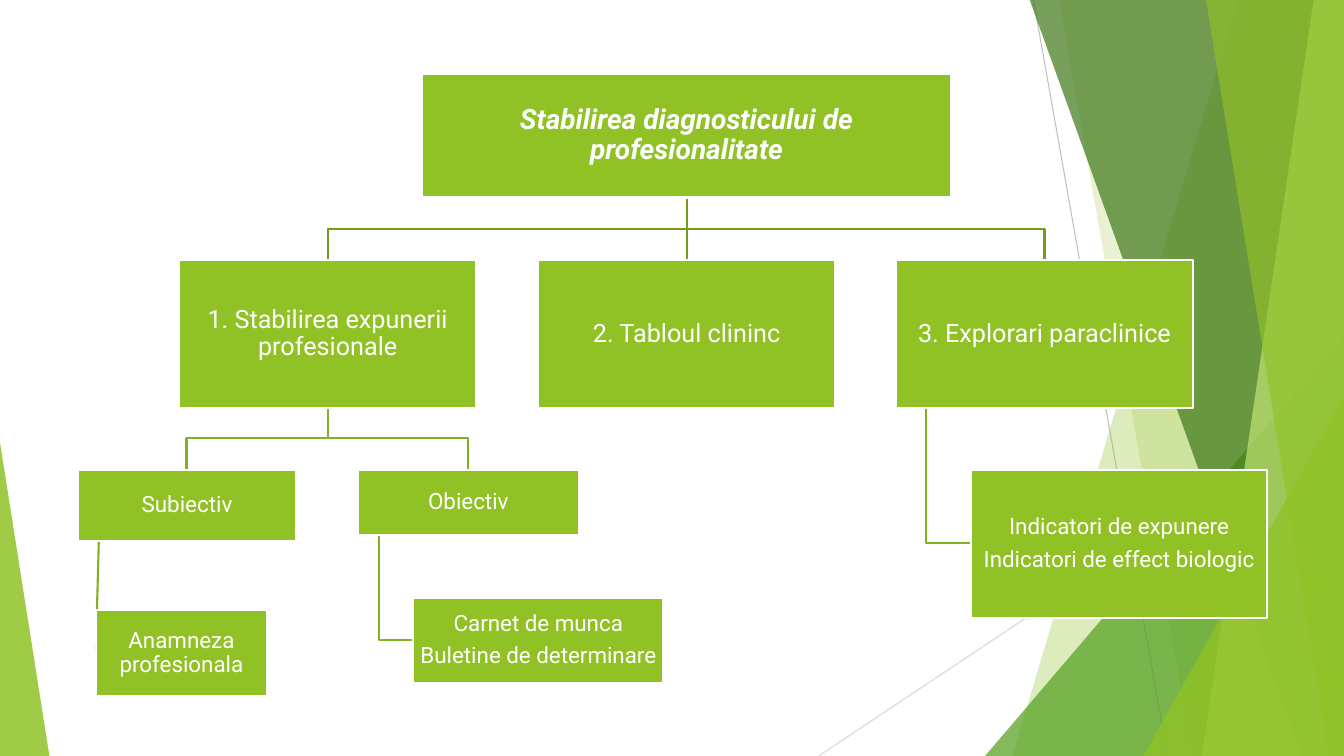
import pptx
import pptx.util
import pptx.dml.color
import pptx.enum.shapes
import pptx.enum.text
import pptx.oxml
import pptx.oxml.ns

RGB = pptx.dml.color.RGBColor
SHAPE = pptx.enum.shapes.MSO_SHAPE
WHITE = RGB(0xFF, 0xFF, 0xFF)
LIME = RGB(0x90, 0xC2, 0x26)
GREEN = RGB(0x54, 0xA0, 0x21)
FOREST = RGB(0x3F, 0x78, 0x19)
PALE_LIME = RGB(0xC0, 0xE4, 0x74)
ROOT_LINK = RGB(0x73, 0x9B, 0x1E)
BRANCH_LINK = RGB(0x83, 0xB0, 0x22)
GREY = RGB(0xBF, 0xBF, 0xBF)
LIGHT_GREY = RGB(0xD9, 0xD9, 0xD9)
PX = 9144
WIDTH, HEIGHT = 1333, 750


def write_text(frame, text, size, font="Roboto", color=WHITE, bold=False, italic=False):
    frame.word_wrap = True
    frame.vertical_anchor = pptx.enum.text.MSO_ANCHOR.MIDDLE
    frame.margin_left = frame.margin_right = PX
    frame.margin_top = frame.margin_bottom = PX
    for index, line in enumerate(text.split("\n")):
        paragraph = frame.add_paragraph() if index else frame.paragraphs[0]
        paragraph.alignment = pptx.enum.text.PP_ALIGN.CENTER
        paragraph.line_spacing = 0.9
        paragraph.space_after = pptx.util.Pt(size * 0.35)
        run = paragraph.add_run()
        run.text = line
        run.font.name = font
        run.font.size = pptx.util.Pt(size)
        run.font.bold = bold
        run.font.italic = italic
        run.font.color.rgb = color


class Chart:
    def __init__(self, slide):
        self.shapes = slide.shapes
        self.link_width = pptx.util.Pt(1.5)

    def tint(self, shape, color, opacity):
        shape.shadow.inherit = False
        shape.fill.solid()
        shape.fill.fore_color.rgb = color
        shape.line.fill.background()
        srgb = shape.fill._xPr.find(".//" + pptx.oxml.ns.qn("a:srgbClr"))
        alpha = pptx.oxml.parse_xml(
            f'<a:alpha {pptx.oxml.ns.nsdecls("a")} val="{opacity * 1000}"/>')
        srgb.append(alpha)

    def outline(self, points, closed):
        builder = self.shapes.build_freeform(
            points[0][0] * PX, points[0][1] * PX, scale=1.0)
        builder.add_line_segments([(x * PX, y * PX) for x, y in points[1:]], close=closed)
        return builder.convert_to_shape()

    def shard(self, top_x, bottom_x, color, opacity):
        points = [(top_x, -1), (WIDTH, -1), (WIDTH, HEIGHT), (bottom_x, HEIGHT)]
        self.tint(self.outline(points, True), color, opacity)

    def triangle(self, left, top, width, apex, color, opacity):
        shape = self.shapes.add_shape(
            SHAPE.ISOSCELES_TRIANGLE, left * PX, top * PX, width * PX, (HEIGHT - top) * PX)
        shape.adjustments[0] = apex
        self.tint(shape, color, opacity)

    def line(self, start, end, color, width):
        connector = self.shapes.add_connector(
            pptx.enum.shapes.MSO_CONNECTOR.STRAIGHT,
            *[value * PX for value in (*start, *end)])
        connector.line.color.rgb = color
        connector.line.width = width
        connector._element.spPr.append(
            pptx.oxml.parse_xml(f'<a:effectLst {pptx.oxml.ns.nsdecls("a")}/>'))

    def link(self, points, color):
        if len(points) == 2:
            self.line(*points, color, self.link_width)
            return
        shape = self.outline(points, False)
        shape.shadow.inherit = False
        shape.fill.background()
        shape.line.color.rgb = color
        shape.line.width = self.link_width

    def branch(self, parent, child, color):
        start = (parent[0] + parent[2] // 2, parent[1] + parent[3])
        end = (child[0] + child[2] // 2, child[1])
        middle = (start[1] + end[1]) // 2
        bends = [] if start[0] == end[0] else [(start[0], middle), (end[0], middle)]
        self.link([start, *bends, end], color)

    def hang(self, parent, child, color):
        x = parent[0] + parent[2] // 10
        start = (x, parent[1] + parent[3])
        end = (child[0], child[1] + child[3] // 2)
        bends = [(x, end[1])] if end[0] > x else []
        self.link([start, *bends, end], color)

    def box(self, area, text, size, **style):
        shape = self.shapes.add_shape(SHAPE.RECTANGLE, *[value * PX for value in area])
        shape.shadow.inherit = False
        shape.fill.solid()
        shape.fill.fore_color.rgb = LIME
        shape.line.color.rgb = WHITE
        shape.line.width = self.link_width
        write_text(shape.text_frame, text, size, **style)


def main():
    deck = pptx.Presentation()
    deck.slide_width, deck.slide_height = WIDTH * PX, HEIGHT * PX
    chart = Chart(deck.slides.add_slide(deck.slide_layouts[6]))

    hairline = pptx.util.Pt(0.75)
    chart.line((1025, 0), (1158, HEIGHT), GREY, hairline)
    chart.line((WIDTH, 403), (812, HEIGHT), LIGHT_GREY, hairline)
    chart.shard(1228, 1004, LIME, 30)
    chart.shard(1050, 1183, LIME, 20)
    chart.triangle(977, 333, 356, 1, GREEN, 72)
    chart.shard(1021, 1291, FOREST, 70)
    chart.shard(1303, 1192, PALE_LIME, 70)
    chart.shard(1196, 1318, LIME, 65)
    chart.triangle(1134, 393, 199, 1, LIME, 80)
    chart.triangle(0, 439, 49, 0, LIME, 85)

    diagnosis = (419, 73, 524, 123)
    exposure, clinical, tests = [(x, 258, 294, 147) for x in (178, 534, 889)]
    subjective = (77, 466, 217, 71)
    objective = (355, 466, 219, 65)
    history = (95, 605, 170, 86)
    records = (410, 593, 248, 85)
    indicators = (963, 466, 294, 147)

    for child in (exposure, clinical, tests):
        chart.branch(diagnosis, child, ROOT_LINK)
    for child in (subjective, objective):
        chart.branch(exposure, child, BRANCH_LINK)
    for parent, child in ((subjective, history), (objective, records), (tests, indicators)):
        chart.hang(parent, child, BRANCH_LINK)

    chart.box(diagnosis, "Stabilirea diagnosticului de profesionalitate", 20,
              bold=True, italic=True)
    for area, text, size in (
        (exposure, "1. Stabilirea expunerii profesionale", 18),
        (clinical, "2. Tabloul clininc", 18),
        (tests, "3. Explorari paraclinice", 18),
        (subjective, "Subiectiv", 16),
        (objective, "Obiectiv", 16),
        (history, "Anamneza profesionala", 16),
        (records, "Carnet de munca\nBuletine de determinare", 16),
        (indicators, "Indicatori de expunere\nIndicatori de effect biologic", 16),
    ):
        chart.box(area, text, size)

    deck.save("out.pptx")


if __name__ == "__main__":
    main()
